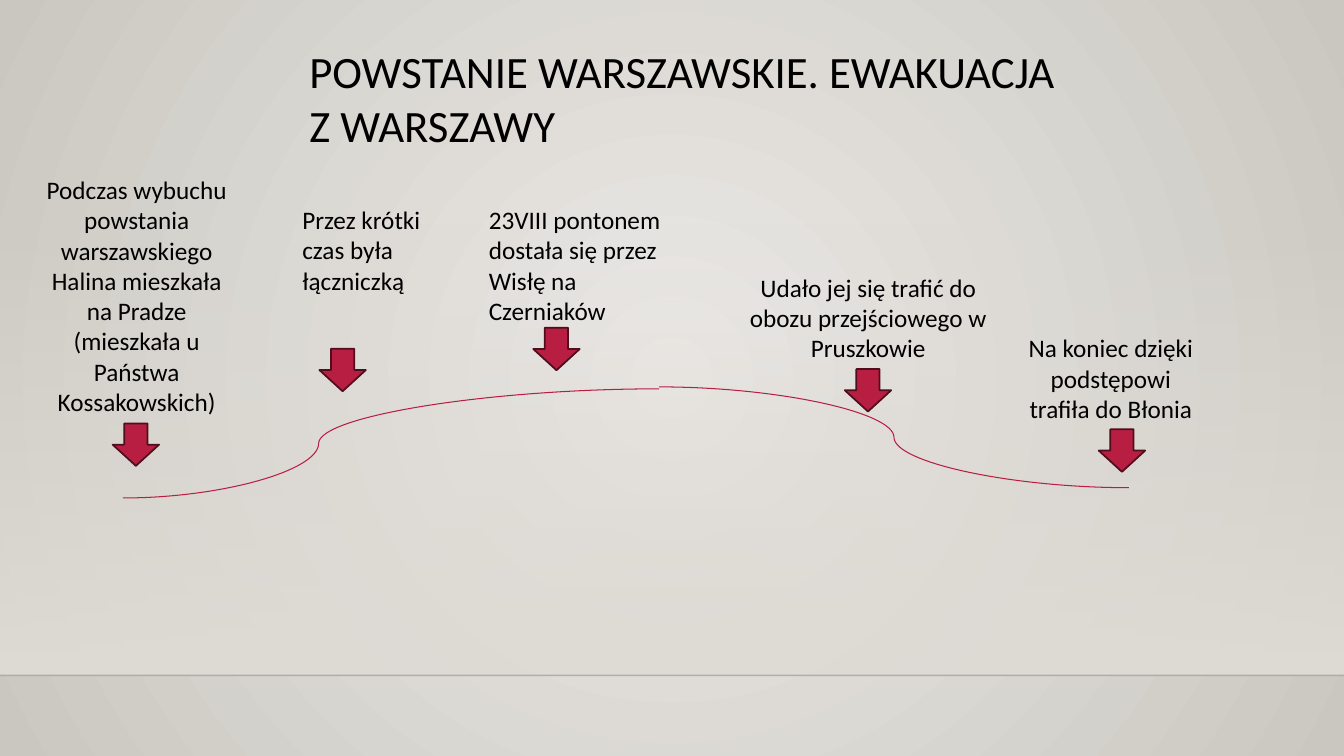
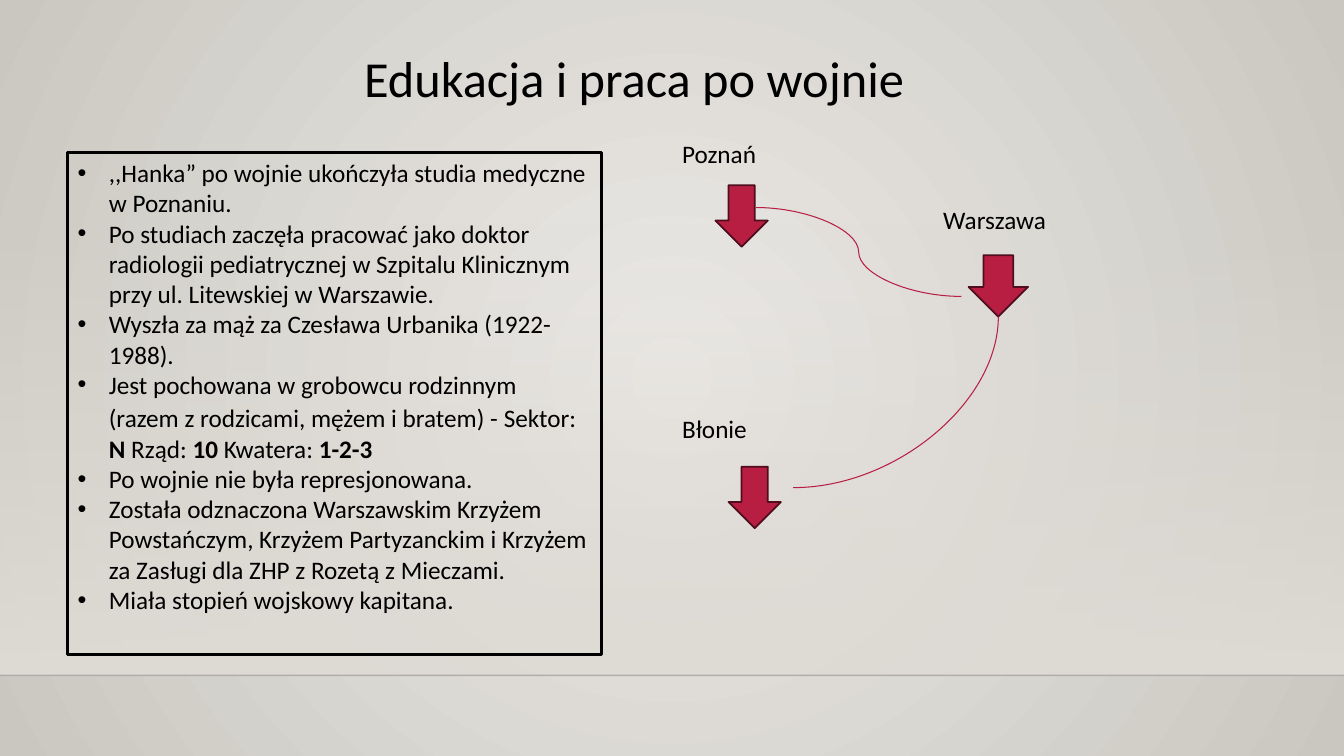
from lxml import etree
from pptx import Presentation
from pptx.dml.color import RGBColor
from pptx.enum.shapes import MSO_CONNECTOR, MSO_SHAPE
from pptx.enum.text import MSO_ANCHOR, MSO_AUTO_SIZE, PP_ALIGN
from pptx.oxml.ns import qn
from pptx.util import Cm, Pt

LEFT, CENTER = PP_ALIGN.LEFT, PP_ALIGN.CENTER
TOP = MSO_ANCHOR.TOP
NO_FIT = MSO_AUTO_SIZE.NONE
DOWN_ARROW, RECTANGLE = MSO_SHAPE.DOWN_ARROW, MSO_SHAPE.RECTANGLE
STRAIGHT, CURVE = MSO_CONNECTOR.STRAIGHT, MSO_CONNECTOR.CURVE
TITLE_ONLY, TITLE_AND_CONTENT = 5, 1
BOTTOM_SITE = 2

# Colours
BLACK = RGBColor(0x00, 0x00, 0x00)
HORIZON = RGBColor(0x00, 0x00, 0x01)
CRIMSON = RGBColor(0xB7, 0x1E, 0x42)
DARK_CRIMSON = RGBColor(0x50, 0x0D, 0x1D)
PAPER_LIGHT = RGBColor(0xEC, 0xEA, 0xE7)
PAPER_DARK = RGBColor(0xCA, 0xC7, 0xC1)
WALL = RGBColor(0xDF, 0xDB, 0xD5)

# Measures in centimetres
PAGE_WIDTH, PAGE_HEIGHT = 33.87, 19.05
WALL_TOP, FLOOR_TOP = 5.61, 17.02
BULLET_INDENT = 0.79
SMALL_ARROW = (1.17, 1.07)

TEXT_FORMAT = {"name": "Calibri", "size": Pt(18), "bold": False}
BOLD = {"bold": True}
FRAME_FORMAT = {"word_wrap": True, "auto_size": NO_FIT, "vertical_anchor": TOP}

# Caption box, its alignment, its text, and the corner of the arrow below it
EVENTS = [
    ((0.84, 4.27, 5.21, 6.4), CENTER,
     "Podczas wybuchu powstania warszawskiego Halina mieszkała na Pradze "
     "(mieszkała u Państwa Kossakowskich)", (2.84, 10.67)),
    ((7.37, 5.03, 3.96, 2.57), LEFT,
     "Przez krótki czas była łączniczką", (8.05, 8.79)),
    ((12.07, 5.03, 4.88, 3.33), LEFT,
     "23VIII pontonem dostała się przez Wisłę na Czerniaków", (13.44, 8.26)),
    ((18.31, 6.73, 7.14, 2.57), CENTER,
     "Udało jej się trafić do obozu przejściowego w Pruszkowie", (21.29, 9.3)),
    ((25.43, 8.26, 5.13, 2.57), CENTER,
     "Na koniec dzięki podstępowi trafiła do Błonia", (27.69, 10.82)),
]

# City name, its box, and the box of the arrow below it
CITIES = [
    ("Poznań", (16.94, 3.35, 5.18, 1.07), (18.03, 4.67, 1.32, 1.55)),
    ("Błonie", (16.94, 10.29, 4.37, 1.02), (18.36, 11.76, 1.32, 1.55)),
    ("Warszawa", (23.52, 5.03, 4.29, 1.02), (24.41, 6.43, 1.5, 1.55)),
]

# Each list item is a row of (text, changes to the text format)
FACTS = [
    [(",,Hanka” po wojnie ukończyła studia medyczne w Poznaniu.", {})],
    [("Po studiach zaczęła pracować jako doktor radiologii pediatrycznej "
      "w Szpitalu Klinicznym przy ul. Litewskiej w Warszawie.", {})],
    [("Wyszła za mąż za Czesława Urbanika (1922-1988).", {})],
    [("Jest pochowana w grobowcu rodzinnym (razem z rodzicami, mężem "
      "i bratem) -", {}),
     (" ", {"name": "Manrope", "size": Pt(20)}),
     ("Sektor: ", {}), ("N", BOLD), (" Rząd: ", {}), ("10", BOLD),
     (" Kwatera: ", {}), ("1-2-3", BOLD)],
    [("Po wojnie nie była represjonowana.", {})],
    [("Została odznaczona Warszawskim Krzyżem Powstańczym, Krzyżem "
      "Partyzanckim i Krzyżem za Zasługi dla ZHP z Rozetą z Mieczami.", {})],
    [("Miała stopień wojskowy kapitana.", {})],
]


def cm(values):
    return [Cm(value) for value in values]


def set_format(target, values):
    for name, value in values.items():
        setattr(target, name, value)


def add_span(para, text, changes):
    span = para.add_run()
    span.text = text
    set_format(span.font, TEXT_FORMAT | changes)
    span.font.color.rgb = BLACK


def place(box, area):
    names = ("left", "top", "width", "height")
    set_format(box, dict(zip(names, cm(area))))
    set_format(box.text_frame, FRAME_FORMAT)


def set_title(page, text, area, size):
    place(page.shapes.title, area)
    para = page.shapes.title.text_frame.paragraphs[0]
    para.alignment = LEFT
    add_span(para, text, {"size": Pt(size)})


def add_caption(page, text, area, alignment=LEFT):
    box = page.shapes.add_textbox(*cm(area))
    set_format(box.text_frame, FRAME_FORMAT)
    para = box.text_frame.paragraphs[0]
    para.alignment = alignment
    add_span(para, text, {})


def fill_list(box, area, items):
    place(box, area)
    box.line.color.rgb = BLACK
    box.line.width = Pt(2.25)
    frame = box.text_frame
    for index, item in enumerate(items):
        para = frame.add_paragraph() if index else frame.paragraphs[0]
        para.space_before = Pt(0)
        settings = para._p.get_or_add_pPr()
        settings.set("marL", str(Cm(BULLET_INDENT)))
        settings.set("indent", str(-Cm(BULLET_INDENT)))
        etree.SubElement(settings, qn("a:buFont"), typeface="Arial")
        etree.SubElement(settings, qn("a:buChar"), char="•")
        for text, changes in item:
            add_span(para, text, changes)


def add_arrow(page, area):
    arrow = page.shapes.add_shape(DOWN_ARROW, *cm(area))
    arrow.shadow.inherit = False
    arrow.fill.solid()
    arrow.fill.fore_color.rgb = CRIMSON
    arrow.line.color.rgb = DARK_CRIMSON
    arrow.line.width = Pt(1.25)
    return arrow


def add_line(page, kind, start, end, color, width):
    line = page.shapes.add_connector(kind, *cm(start + end))
    line.line.color.rgb = color
    line.line.width = Pt(width)
    etree.SubElement(line.element.spPr, qn("a:effectLst"))
    return line


def add_curve(page, start, end, bend=50):
    """Draw an S curve that turns at bend percent of its width."""
    curve = add_line(page, CURVE, start, end, CRIMSON, 0.75)
    guides = next(curve.element.iter(qn("a:avLst")))
    etree.SubElement(guides, qn("a:gd"), name="adj1",
                     fmla=f"val {round(bend * 1000)}")
    return curve


def add_quarter_curve(page, start, end, target):
    """Draw a single bend that ends at the bottom of the target."""
    curve = add_line(page, CURVE, start, end, CRIMSON, 0.75)
    next(curve.element.iter(qn("a:prstGeom"))).set("prst", "curvedConnector2")
    curve.end_connect(target, BOTTOM_SITE)


def set_alpha(color, percent):
    etree.SubElement(color, qn("a:alpha"), val=str(percent * 1000))


def set_gradient(fill, first, last):
    fill.gradient()
    for stop, color, position in zip(fill.gradient_stops, (first, last), (0, 1)):
        stop.color.rgb = color
        stop.position = position


def style_master(deck, page):
    """Give the master its backdrop; the shapes are made on page, then moved."""
    master = deck.slide_master
    set_gradient(master.background.fill, PAPER_LIGHT, PAPER_DARK)
    gradient = next(master.element.iter(qn("a:gradFill")))
    gradient.remove(gradient.find(qn("a:lin")))
    circle = etree.SubElement(gradient, qn("a:path"), path="circle")
    etree.SubElement(circle, qn("a:fillToRect"),
                     {side: "50000" for side in "ltrb"})

    # Wall that fades in downwards
    wall = page.shapes.add_shape(
        RECTANGLE, *cm((0, WALL_TOP, PAGE_WIDTH, FLOOR_TOP - WALL_TOP)))
    wall.shadow.inherit = False
    wall.line.fill.background()
    set_gradient(wall.fill, WALL, WALL)
    wall.fill.gradient_angle = 270
    set_alpha(next(wall.element.iter(qn("a:srgbClr"))), 0)

    # Edge of the floor
    edge = add_line(page, STRAIGHT, (0, FLOOR_TOP), (PAGE_WIDTH, FLOOR_TOP),
                    HORIZON, 1)
    set_alpha(next(edge.element.iter(qn("a:srgbClr"))), 20)

    for offset, shape in enumerate((wall, edge)):
        next(shape.element.iter(qn("p:cNvPr"))).set("id", str(100 + offset))
        master.shapes.element.insert(2 + offset, shape.element)


def build_uprising(page):
    set_title(page, "POWSTANIE WARSZAWSKIE. EWAKUACJA Z WARSZAWY",
              (7.54, 0.97, 19.96, 3), 32)
    for area, alignment, text, corner in EVENTS:
        add_caption(page, text, area, alignment)
        add_arrow(page, corner + SMALL_ARROW)
    add_curve(page, (3.1, 12.55), (16.61, 9.8), 36.5)
    add_curve(page, (16.61, 9.75), (28.45, 12.29))


def build_after_war(page):
    set_title(page, "Edukacja i praca po wojnie", (8.92, 1.07, 16.43, 1.8), 36)
    fill_list(page.placeholders[1], (1.7, 3.84, 13.46, 12.65), FACTS)
    arrows = {}
    for city, area, arrow_area in CITIES:
        add_caption(page, city, area)
        arrows[city] = add_arrow(page, arrow_area)
    add_curve(page, (19.05, 5.23), (24.23, 7.47))
    add_quarter_curve(page, (19.99, 12.29), (25.16, 7.98), arrows["Warszawa"])


def main():
    deck = Presentation()
    deck.slide_width, deck.slide_height = cm((PAGE_WIDTH, PAGE_HEIGHT))
    uprising = deck.slides.add_slide(deck.slide_layouts[TITLE_ONLY])
    after_war = deck.slides.add_slide(deck.slide_layouts[TITLE_AND_CONTENT])
    style_master(deck, uprising)
    build_uprising(uprising)
    build_after_war(after_war)
    deck.save("out.pptx")


if __name__ == "__main__":
    main()
